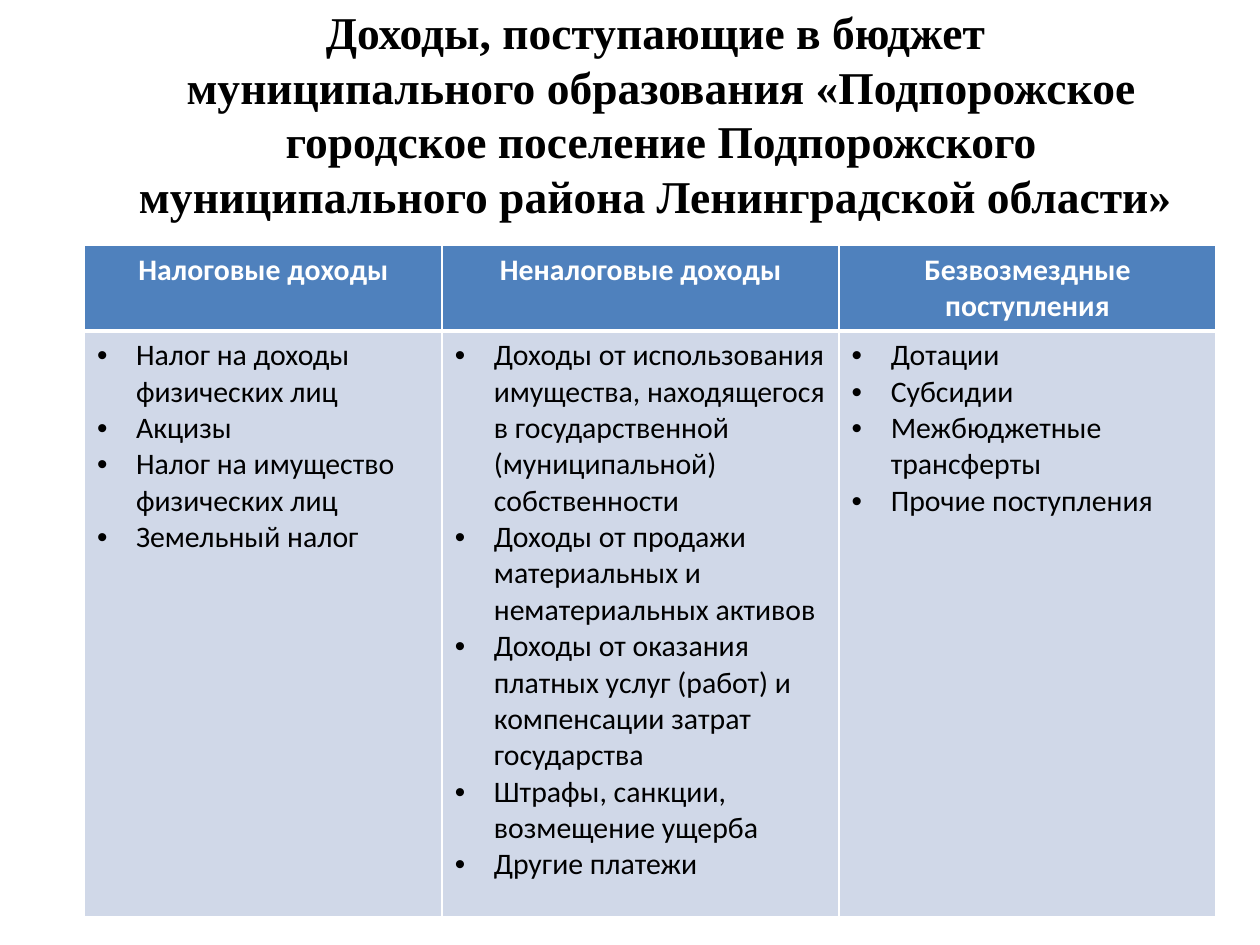
from lxml import etree
from pptx import Presentation
from pptx.dml.color import RGBColor
from pptx.enum.text import MSO_ANCHOR, MSO_AUTO_SIZE, PP_ALIGN
from pptx.oxml.ns import qn
from pptx.util import Inches, Pt

CENTER, LEFT = PP_ALIGN.CENTER, PP_ALIGN.LEFT
MIDDLE, NO_FIT = MSO_ANCHOR.MIDDLE, MSO_AUTO_SIZE.NONE
TITLE_ONLY = 5
WIDTH, HEIGHT = 10, 7.5

TITLE_LINES = [
    "Доходы, поступающие в бюджет ",
    "муниципального образования «Подпорожское городское поселение "
    "Подпорожского муниципального района Ленинградской области» ",
]
INCOME = {
    "Налоговые доходы": [
        "Налог на доходы физических лиц",
        "Акцизы",
        "Налог на имущество физических лиц",
        "Земельный налог",
    ],
    "Неналоговые доходы": [
        "Доходы от использования имущества, находящегося в государственной "
        "(муниципальной) собственности",
        "Доходы от продажи материальных и нематериальных активов",
        "Доходы от оказания платных услуг (работ) и компенсации затрат государства",
        "Штрафы, санкции, возмещение ущерба",
        "Другие платежи",
    ],
    "Безвозмездные поступления": [
        "Дотации",
        "Субсидии",
        "Межбюджетные трансферты",
        "Прочие поступления",
    ],
}
COLUMN_WIDTHS = [2.84, 3.15, 2.99]
ROW_HEIGHTS = [0.66, 4.65]


def color(value):
    return RGBColor.from_string(value)


class IncomeSlide:
    title_font, body_font = "Times New Roman", "Calibri"
    title_size, body_size = 26, 17
    dark, light = "000000", "FFFFFF"
    header_fill, body_fill = "4F81BD", "D0D8E8"
    indent = 0.31

    def __init__(self, deck):
        self.slide = deck.slides.add_slide(deck.slide_layouts[TITLE_ONLY])

    def format(self, font, name, size, hue, bold):
        font.name, font.size, font.bold = name, Pt(size), bold
        font.color.rgb = color(hue)

    def title(self, lines, left, top, width, height):
        """Place the title; position and size are shares of the slide."""
        box = self.slide.shapes.title
        box.left, box.width = Inches(left * WIDTH), Inches(width * WIDTH)
        box.top, box.height = Inches(top * HEIGHT), Inches(height * HEIGHT)
        frame = box.text_frame
        frame.word_wrap, frame.auto_size = True, NO_FIT
        frame.vertical_anchor = MIDDLE
        para = frame.paragraphs[0]
        para.alignment = CENTER
        for index, line in enumerate(lines):
            if index:
                para.add_line_break()
            span = para.add_run()
            span.text = line
            self.format(span.font, self.title_font, self.title_size, self.dark, True)

    def table(self, income, left, top, widths, heights):
        """Place a header row and one cell of bullets under each heading."""
        table = self.slide.shapes.add_table(
            len(heights), len(widths), Inches(left * WIDTH), Inches(top * HEIGHT),
            Inches(sum(widths)), Inches(sum(heights))).table
        for column, width in zip(table.columns, widths):
            column.width = Inches(width)
        for row, height in zip(table.rows, heights):
            row.height = Inches(height)
        for index, (heading, items) in enumerate(income.items()):
            self.cell(table.cell(0, index), [heading], header=True)
            self.cell(table.cell(1, index), items, header=False)

    def cell(self, cell, items, header):
        self.borders(cell, top=1 if header else 3, bottom=3 if header else 1)
        cell.fill.solid()
        cell.fill.fore_color.rgb = color(self.header_fill if header else self.body_fill)
        frame = cell.text_frame
        for index, item in enumerate(items):
            para = frame.add_paragraph() if index else frame.paragraphs[0]
            para.alignment = CENTER if header else LEFT
            if not header:
                self.bullet(para)
            span = para.add_run()
            span.text = item
            self.format(span.font, self.body_font, self.body_size,
                        self.light if header else self.dark, header)

    def bullet(self, para):
        props = para._p.get_or_add_pPr()
        props.set("marL", str(Inches(self.indent)))
        props.set("indent", str(-Inches(self.indent)))
        etree.SubElement(props, qn("a:buFont"), typeface="Arial")
        etree.SubElement(props, qn("a:buChar"), char="•")

    def borders(self, cell, top, bottom):
        props = cell._tc.get_or_add_tcPr()
        for side, width in (("L", 1), ("R", 1), ("T", top), ("B", bottom)):
            line = etree.SubElement(props, qn("a:ln" + side), w=str(Pt(width)))
            fill = etree.SubElement(line, qn("a:solidFill"))
            etree.SubElement(fill, qn("a:srgbClr"), val=self.light)


def main():
    deck = Presentation()
    deck.slide_width, deck.slide_height = Inches(WIDTH), Inches(HEIGHT)
    page = IncomeSlide(deck)
    # Heading above, three kinds of income below
    page.title(TITLE_LINES, 0.075, 0.01, 0.9, 0.22)
    page.table(INCOME, 0.067, 0.26, COLUMN_WIDTHS, ROW_HEIGHTS)
    deck.save("out.pptx")


if __name__ == "__main__":
    main()
